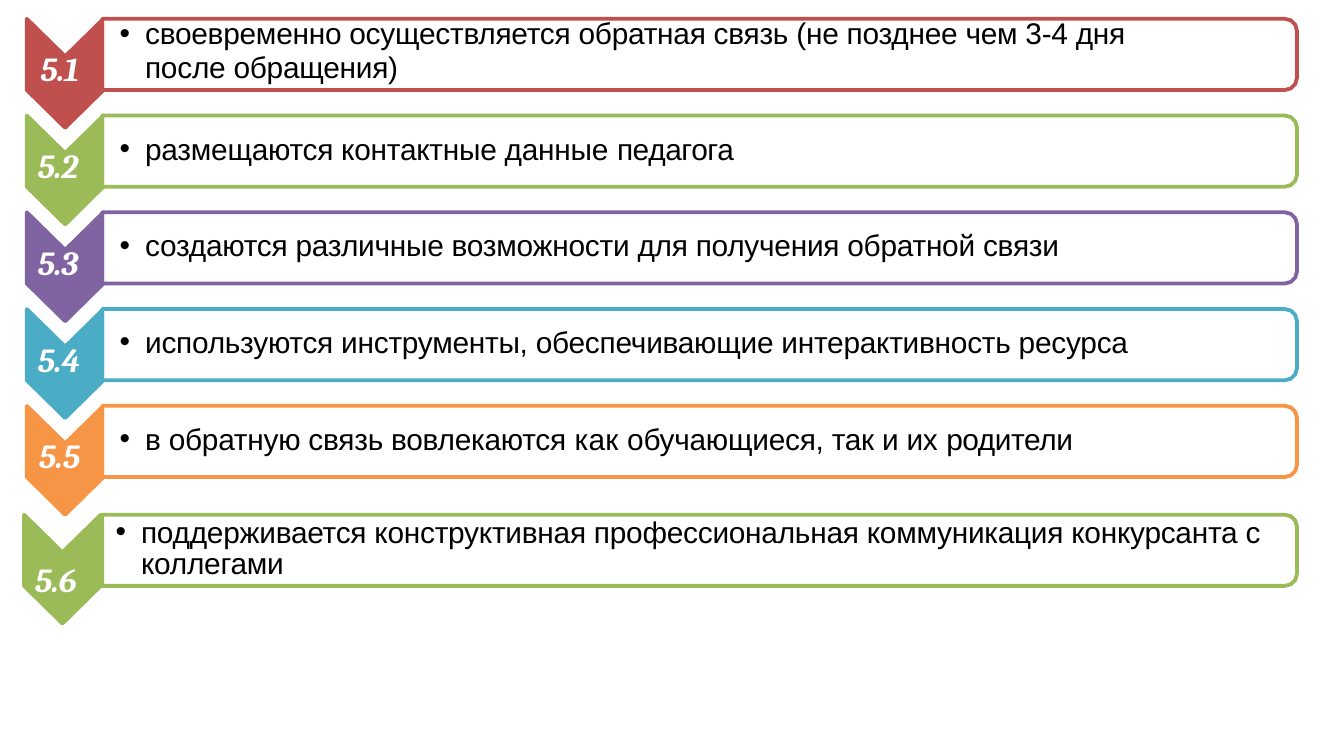
"""Build a slide listing six feedback criteria as numbered chevrons with outlined cards."""
from dataclasses import dataclass
from math import cos, radians, sin

from lxml.etree import SubElement
from pptx import Presentation
from pptx.dml.color import RGBColor
from pptx.enum.text import MSO_AUTO_SIZE
from pptx.oxml.ns import qn
from pptx.util import Inches, Pt

GROW = MSO_AUTO_SIZE.SHAPE_TO_FIT_TEXT


@dataclass(frozen=True)
class Theme:
    red: str = "C0504D"
    green: str = "9BBA58"
    purple: str = "8063A1"
    blue: str = "4AACC5"
    orange: str = "F79546"
    white: str = "FFFFFF"
    black: str = "000000"
    label_font: str = "Cambria"
    body_font: str = "Arial"
    label_size: float = 18
    body_size: float = 16
    outline: float = 2.04
    card_opacity: int = 90


@dataclass(frozen=True)
class Segment:
    text: str
    tracking: float = -0.1


@dataclass(frozen=True)
class Criterion:
    label: str
    color: str
    lines: tuple[tuple[Segment, ...], ...]
    top: float
    label_left: float = 0.27
    label_offset: float = 0.21
    label_width: float = 0.42
    chevron_left: float = 0.2
    text_left: float = 0.78
    text_offset: float = 0.1
    text_height: float = 0.29
    text_inset: float = 0.01
    line_spacing: float | None = None


THEME = Theme()
SLIDE_WIDTH = 10
SLIDE_HEIGHT = SLIDE_WIDTH * 9 / 16
FIRST_TOP, PITCH = 0.14, 0.72
CHEVRON_WIDTH, CHEVRON_DEPTH, ROW_HEIGHT = 0.57, 0.28, 0.53
CARD_LEFT, CARD_RIGHT, CARD_RADIUS = 0.76, 9.65, 0.09
TEXT_WIDTH, TEXT_INDENT, BULLET_HANG = 8.82, 0.3, 0.19

CRITERIA = (
    Criterion("5.1", THEME.red, (
        (Segment("своевременно осуществляется обратная связь (не позднее чем 3-4 дня"),),
        (Segment("после обращения)"),),
    ), FIRST_TOP, label_left=0.29, label_width=0.38, text_offset=-0.02,
        text_height=0.52, line_spacing=17.9),
    Criterion("5.2", THEME.green, (
        (Segment("размещаются контактные данные "), Segment("педагога", -0.2)),
    ), FIRST_TOP + PITCH),
    Criterion("5.3", THEME.purple, (
        (Segment("создаются различные возможности для получения обратной связи"),),
    ), FIRST_TOP + 2 * PITCH),
    Criterion("5.4", THEME.blue, (
        (Segment("используются инструменты, обеспечивающие интерактивность ресурса"),),
    ), FIRST_TOP + 3 * PITCH),
    Criterion("5.5", THEME.orange, (
        (Segment("в обратную связь вовлекаются "), Segment("как ", 0.1),
         Segment("обучающиеся, так и их "), Segment("родители", -0.2)),
    ), FIRST_TOP + 4 * PITCH, label_left=0.28),
    Criterion("5.6", THEME.green, (
        (Segment("поддерживается конструктивная профессиональная коммуникация "
                 "конкурсанта с коллегами"),),
    ), 3.83, label_left=0.25, label_offset=0.32, label_width=0.58,
        chevron_left=0.18, text_left=0.75, text_offset=-0.02,
        text_height=0.52, text_inset=0.05, line_spacing=16.6),
)


def add_outline(slide, points: list[tuple[float, float]], fill: str, line: str):
    """Draw a closed polygon with a rounded-join outline."""
    corners = [(Inches(x), Inches(y)) for x, y in points]
    builder = slide.shapes.build_freeform(*corners[0], scale=1.0)
    builder.add_line_segments(corners[1:], close=True)
    shape = builder.convert_to_shape()
    shape.shadow.inherit = False
    shape.fill.solid()
    shape.fill.fore_color.rgb = RGBColor.from_string(fill)
    shape.line.color.rgb = RGBColor.from_string(line)
    shape.line.width = Pt(THEME.outline)
    SubElement(shape.line._get_or_add_ln(), qn("a:round"))
    return shape


def add_chevron(slide, criterion: Criterion) -> None:
    """Draw the downward chevron of one row."""
    left, top = criterion.chevron_left, criterion.top
    middle, right = left + CHEVRON_WIDTH / 2, left + CHEVRON_WIDTH
    bottom = top + ROW_HEIGHT
    points = [(right, top), (middle, top + CHEVRON_DEPTH), (left, top),
              (left, bottom), (middle, bottom + CHEVRON_DEPTH), (right, bottom)]
    add_outline(slide, points, criterion.color, criterion.color)


def add_card(slide, criterion: Criterion) -> None:
    """Draw the translucent card with rounded right corners."""
    top, bottom = criterion.top, criterion.top + ROW_HEIGHT
    center = CARD_RIGHT - CARD_RADIUS
    points = [(CARD_LEFT, bottom), (CARD_LEFT, top)]
    for middle, start in ((top + CARD_RADIUS, -90), (bottom - CARD_RADIUS, 0)):
        for degrees in range(start, start + 91, 30):
            angle = radians(degrees)
            points.append((center + CARD_RADIUS * cos(angle),
                           middle + CARD_RADIUS * sin(angle)))
    shape = add_outline(slide, points, THEME.white, criterion.color)
    color = shape.fill._xPr.find(qn("a:solidFill")).find(qn("a:srgbClr"))
    SubElement(color, qn("a:alpha"), val=str(THEME.card_opacity * 1000))


def add_text_frame(slide, left: float, top: float, width: float, height: float,
                   inset: float):
    """Add a wrapping text box and return its text frame."""
    shape = slide.shapes.add_textbox(Inches(left), Inches(top), Inches(width), Inches(height))
    frame = shape.text_frame
    frame.word_wrap = True
    frame.auto_size = GROW
    frame.margin_left = frame.margin_right = frame.margin_bottom = 0
    frame.margin_top = Inches(inset)
    return frame


def add_run(paragraph, segment: Segment, font: str, size: float, color: str):
    """Append one styled run and return it."""
    run = paragraph.add_run()
    run.text = segment.text
    run.font.name = font
    run.font.size = Pt(size)
    run.font.color.rgb = RGBColor.from_string(color)
    run.font._element.set("spc", str(round(segment.tracking * 100)))
    return run


def add_label(slide, criterion: Criterion) -> None:
    """Write the criterion number over its chevron."""
    frame = add_text_frame(slide, criterion.label_left, criterion.top + criterion.label_offset,
                           criterion.label_width, 0.33, 0.01)
    paragraph = frame.paragraphs[0]
    paragraph._p.get_or_add_pPr().set("marL", str(Inches(0.01)))
    run = add_run(paragraph, Segment(criterion.label), THEME.label_font,
                  THEME.label_size, THEME.white)
    run.font.bold = run.font.italic = True


def add_bullet(paragraph) -> None:
    """Give a paragraph a round bullet and a tab stop at its indent."""
    properties = paragraph._p.get_or_add_pPr()
    properties.set("indent", str(-Inches(BULLET_HANG)))
    SubElement(properties, qn("a:buFont"), typeface=THEME.body_font)
    SubElement(properties, qn("a:buChar"), char="•")
    tabs = SubElement(properties, qn("a:tabLst"))
    SubElement(tabs, qn("a:tab"), pos=str(Inches(TEXT_INDENT)), algn="l")


def add_description(slide, criterion: Criterion) -> None:
    """Write the bulleted wording of one criterion."""
    frame = add_text_frame(slide, criterion.text_left, criterion.top + criterion.text_offset,
                           TEXT_WIDTH, criterion.text_height, criterion.text_inset)
    for index, segments in enumerate(criterion.lines):
        paragraph = frame.add_paragraph() if index else frame.paragraphs[0]
        paragraph._p.get_or_add_pPr().set("marL", str(Inches(TEXT_INDENT)))
        if index == 0:
            add_bullet(paragraph)
        paragraph.font.name = THEME.body_font
        paragraph.font.size = Pt(THEME.body_size)
        if criterion.line_spacing:
            paragraph.line_spacing = Pt(criterion.line_spacing)
        for segment in segments:
            add_run(paragraph, segment, THEME.body_font, THEME.body_size, THEME.black)


def main() -> None:
    """Create and save the presentation."""
    presentation = Presentation()
    presentation.slide_width = Inches(SLIDE_WIDTH)
    presentation.slide_height = Inches(SLIDE_HEIGHT)
    slide = presentation.slides.add_slide(presentation.slide_layouts[6])
    for criterion in CRITERIA:
        add_chevron(slide, criterion)
        add_label(slide, criterion)
        add_card(slide, criterion)
        add_description(slide, criterion)
    presentation.save("out.pptx")


if __name__ == "__main__":
    main()
